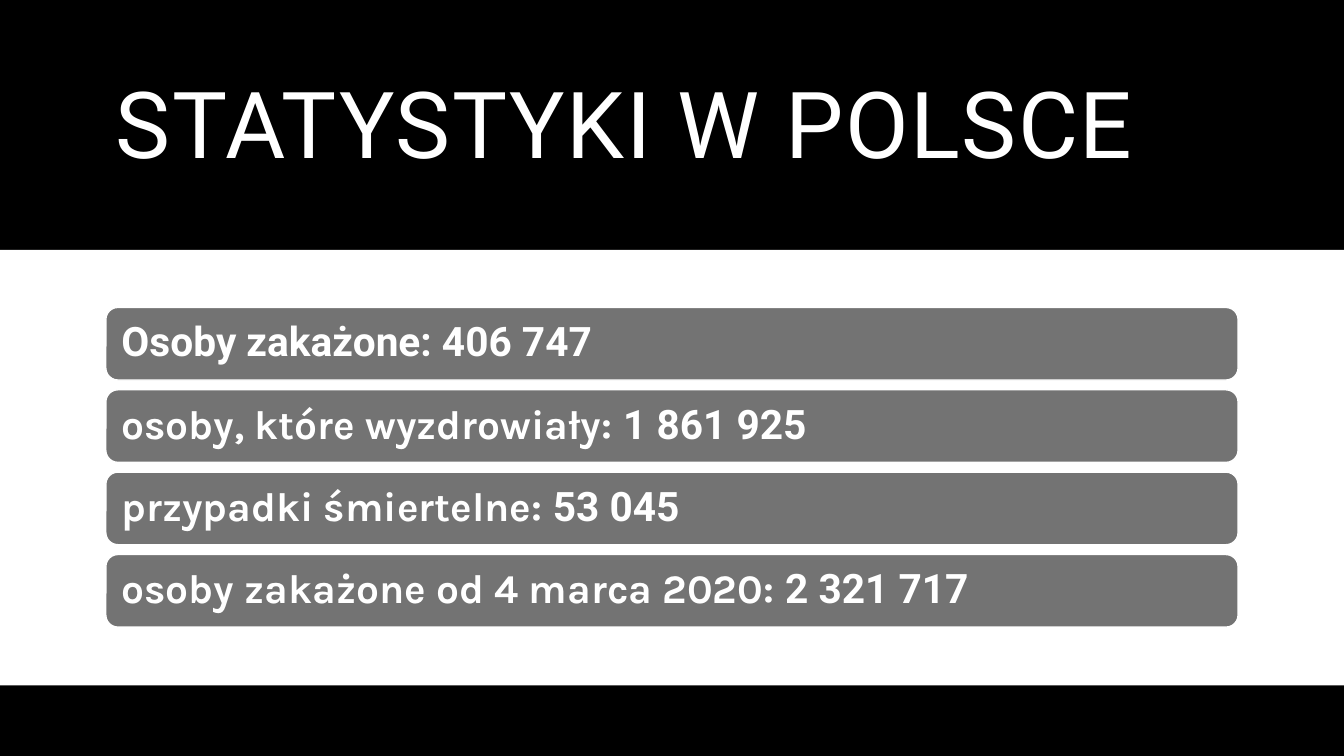
import pptx
import pptx.util
import pptx.dml.color
import pptx.enum.shapes
import pptx.enum.text
from dataclasses import dataclass

Inches, Pt = pptx.util.Inches, pptx.util.Pt
SHAPE = pptx.enum.shapes.MSO_SHAPE
ANCHOR = pptx.enum.text.MSO_ANCHOR
ALIGN = pptx.enum.text.PP_ALIGN


@dataclass(frozen=True)
class Theme:
    black: str = "000000"
    white: str = "FFFFFF"
    grey: str = "737373"
    title_pt: int = 66
    row_pt: int = 29
    display: str = "Roboto"
    text: str = "Karla"


theme = Theme()


def rgb(value):
    return pptx.dml.color.RGBColor.from_string(value)


def add_block(kind, left, top, width, height, fill):
    """Add a shadowless filled shape without outline; lengths in inches."""
    sp = s.shapes.add_shape(kind, *map(Inches, (left, top, width, height)))
    sp.shadow.inherit = False
    sp.fill.solid()
    sp.fill.fore_color.rgb = rgb(fill)
    sp.line.fill.background()
    return sp


WIDTH, HEIGHT = 13.33, 7.5
MARGIN = 1.05
CONTENT_W = WIDTH - 2 * MARGIN
BAND_TOP, BAND_H = 2.48, 4.32
ROW_TOP, ROW_H, ROW_PITCH = 3.05, 0.72, 0.817

prs = pptx.Presentation()
prs.slide_width, prs.slide_height = Inches(WIDTH), Inches(HEIGHT)
s = prs.slides.add_slide(prs.slide_layouts[5])

# Backdrop
add_block(SHAPE.RECTANGLE, 0, 0, WIDTH, HEIGHT, theme.black)
add_block(SHAPE.RECTANGLE, 0, BAND_TOP, WIDTH, BAND_H, theme.white)

# Title, raised above the backdrop
title = s.shapes.title
s.shapes._spTree.append(title._element)
title.left, title.top = Inches(MARGIN), Inches(0.35)
title.width, title.height = Inches(CONTENT_W), Inches(1.86)
tf = title.text_frame
tf.text = "STATYSTYKI W POLSCE"
tf.auto_size = pptx.enum.text.MSO_AUTO_SIZE.NONE
tf.vertical_anchor = ANCHOR.MIDDLE
p = tf.paragraphs[0]
p.alignment, p.line_spacing = ALIGN.LEFT, 0.9
p.font.name, p.font.size = theme.display, Pt(theme.title_pt)
p.font.color.rgb = rgb(theme.white)
p.runs[0]._r.get_or_add_rPr().set("spc", "120")

# Statistics: each row is a list of (text, font) runs
statistics = [
    [("Osoby zakażone: 406 747", theme.display)],
    [("osoby, które wyzdrowiały:", theme.text), (" 1 861 925", theme.display)],
    [("przypadki śmiertelne:", theme.text), (" 53 045", theme.display)],
    [("osoby zakażone od 4 marca 2020:", theme.text), (" 2 321 717", theme.display)],
]
for i, runs in enumerate(statistics):
    bar = add_block(SHAPE.ROUNDED_RECTANGLE, MARGIN, ROW_TOP + i * ROW_PITCH,
                    CONTENT_W, ROW_H, theme.grey)
    bar.line.color.rgb = rgb(theme.white)
    bar.line.width = Pt(1)
    tf = bar.text_frame
    tf.word_wrap = True
    tf.vertical_anchor = ANCHOR.MIDDLE
    tf.margin_left = tf.margin_right = Inches(0.12)
    p = tf.paragraphs[0]
    p.alignment, p.line_spacing = ALIGN.LEFT, 0.9
    p.font.size, p.font.bold = Pt(theme.row_pt), True
    p.font.color.rgb = rgb(theme.white)
    for text, font in runs:
        r = p.add_run()
        r.text, r.font.name = text, font

prs.save("out.pptx")
